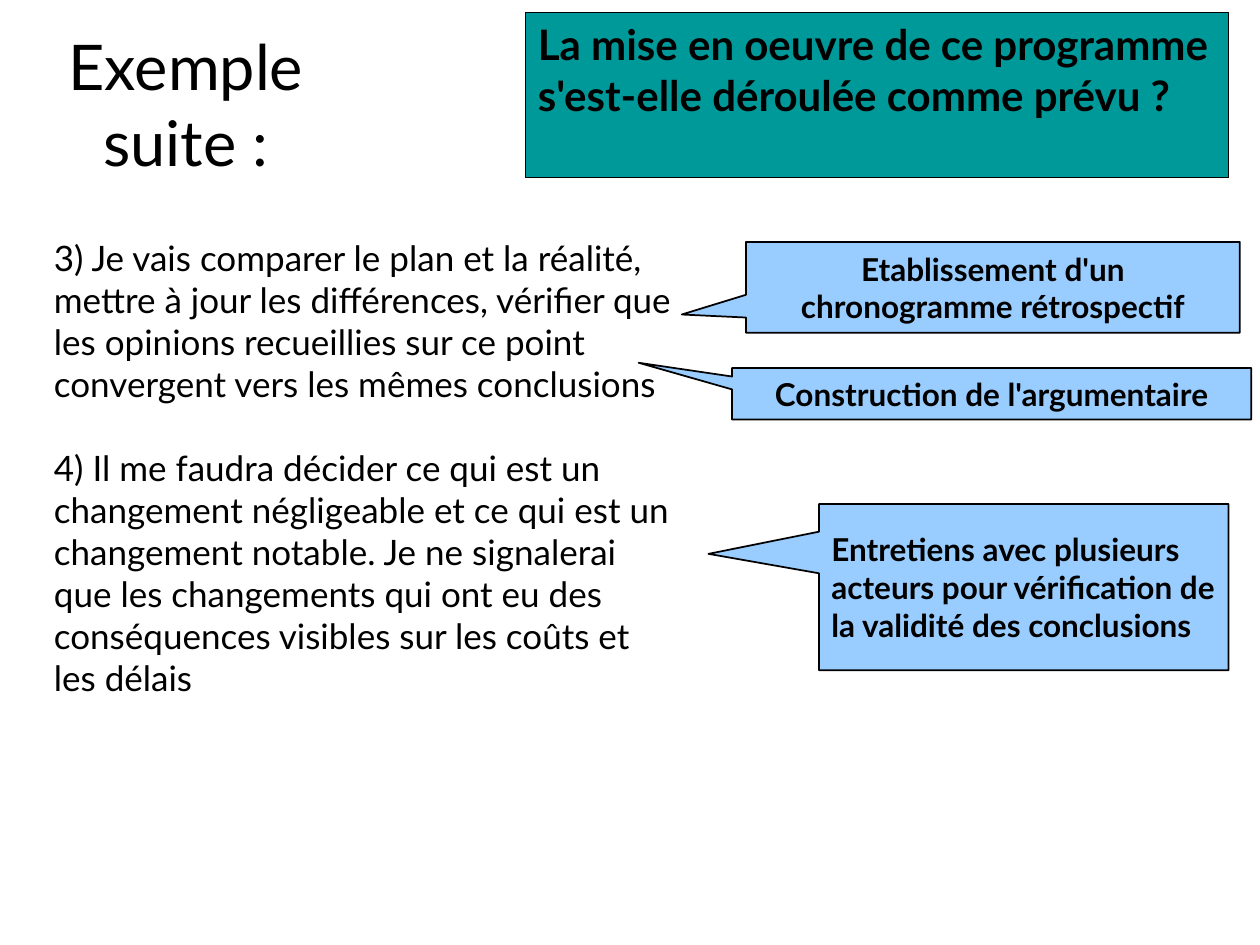
import pptx
import pptx.util
import pptx.dml.color
import pptx.enum.shapes
import pptx.enum.text

Pt = pptx.util.Pt
RGB = pptx.dml.color.RGBColor.from_string
SHAPE = pptx.enum.shapes.MSO_SHAPE
ALIGN = pptx.enum.text.PP_ALIGN
ANCHOR = pptx.enum.text.MSO_ANCHOR

COLORS = {"ink": "000000", "question": "009999", "callout": "99CCFF"}


def write(frame, *paragraphs, size, bold=False, align=ALIGN.LEFT,
          anchor=ANCHOR.TOP, wrap=True, gap=0):
    frame.word_wrap = wrap
    frame.vertical_anchor = anchor
    frame.margin_left = frame.margin_right = Pt(7.2)
    frame.margin_top = frame.margin_bottom = Pt(3.6)
    for index, text in enumerate(paragraphs):
        paragraph = frame.add_paragraph() if index else frame.paragraphs[0]
        paragraph.alignment = align
        paragraph.space_before = Pt(gap if index else 0)
        run = paragraph.add_run()
        run.text = text
        run.font.name = "Lato"
        run.font.size = Pt(size)
        run.font.bold = bold
        run.font.color.rgb = RGB(COLORS["ink"])


def add_box(kind, box, fill):
    shape = slide.shapes.add_shape(kind, *map(Pt, box))
    shape.shadow.inherit = False
    shape.fill.solid()
    shape.fill.fore_color.rgb = RGB(COLORS[fill])
    shape.line.color.rgb = RGB(COLORS["ink"])
    shape.line.width = Pt(1)
    return shape


deck = pptx.Presentation()
deck.slide_width, deck.slide_height = Pt(720), Pt(540)
slide = deck.slides.add_slide(deck.slide_layouts[5])

heading = slide.shapes.title
heading.left, heading.top, heading.width, heading.height = map(Pt, (8.64, 12.24, 195.12, 93.6))
write(heading.text_frame, "Exemple suite :", size=36, align=ALIGN.CENTER, anchor=ANCHOR.MIDDLE)

question = add_box(SHAPE.RECTANGLE, (300.24, 7.2, 401.76, 94.32), "question")
write(question.text_frame,
      "La mise en oeuvre de ce programme s'est-elle déroulée comme prévu ?",
      size=24, bold=True)

steps = slide.shapes.add_textbox(Pt(23.76), Pt(131.76), Pt(372.24), Pt(271.44))
write(steps.text_frame,
      "3) Je vais comparer le plan et la réalité, mettre à jour les différences, "
      "vérifier que les opinions recueillies sur ce point convergent vers les mêmes conclusions",
      "4) Il me faudra décider ce qui est un changement négligeable et ce qui est un "
      "changement notable. Je ne signalerai que les changements qui ont eu des "
      "conséquences visibles sur les coûts et les délais",
      size=20, gap=24)

callouts = [
    ("Etablissement d'un chronogramme rétrospectif",
     (426.24, 138.24, 282.24, 51.84), (-0.63, 0.3), ALIGN.CENTER, True),
    ("Entretiens avec plusieurs acteurs pour vérification de la validité des conclusions",
     (468, 288, 234, 95.04), (-0.77, -0.2), ALIGN.LEFT, True),
    ("Construction de l'argumentaire",
     (418.32, 210.24, 296.64, 29.52), (-0.68, -0.6), ALIGN.CENTER, False),
]
for text, box, tip, align, wrap in callouts:
    callout = add_box(SHAPE.RECTANGULAR_CALLOUT, box, "callout")
    callout.adjustments[0], callout.adjustments[1] = tip
    write(callout.text_frame, text, size=18, bold=True, align=align,
          anchor=ANCHOR.MIDDLE, wrap=wrap)

deck.save("out.pptx")
